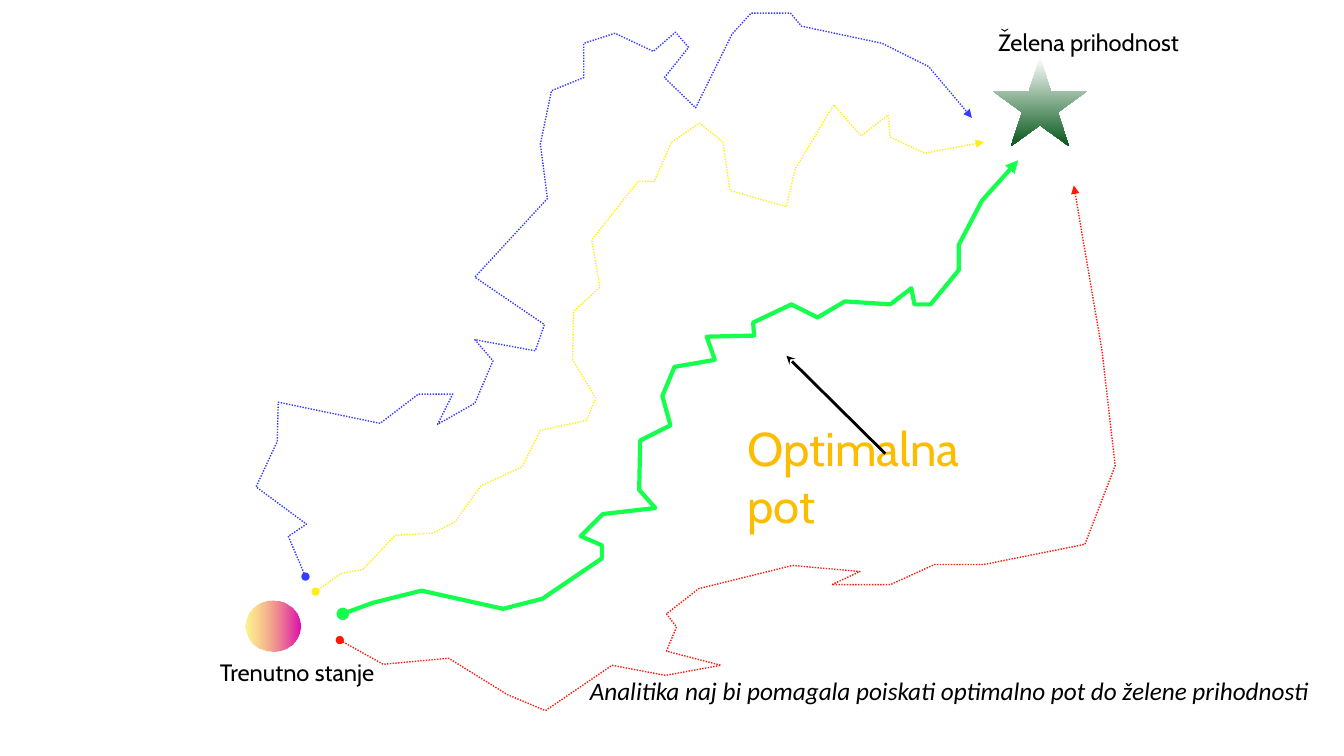
import pptx
import pptx.util
import pptx.dml.color
import pptx.enum.dml
import pptx.enum.shapes
import pptx.enum.text
import pptx.oxml
import pptx.oxml.ns

EMU_PER_PX = 9144
SLIDE_SIZE = (1333, 750)
COLORS = {
    "yellow": "FFEF17", "blue": "363DFF", "red": "FF1708", "green": "15FF4D",
    "black": "000000", "white": "FFFFFF", "forest": "06581A",
    "lemon": "FFE824", "magenta": "DD0CB0", "amber": "FCBD00",
}

OPTIMAL = "green"
ROUTES = {
    "yellow": [
        (313, 587), (338, 569), (360, 565), (392, 531), (429, 529), (451, 518),
        (477, 482), (518, 463), (536, 427), (582, 417), (591, 395), (568, 357),
        (569, 309), (595, 285), (587, 238), (633, 180), (649, 180), (666, 141),
        (694, 122), (717, 141), (724, 189), (780, 205), (789, 167), (827, 104),
        (854, 135), (881, 114), (883, 136), (917, 152), (976, 141)],
    "blue": [
        (303, 572), (286, 532), (304, 520), (254, 483), (275, 438), (276, 399),
        (377, 420), (415, 391), (449, 391), (434, 421), (471, 400), (489, 358),
        (471, 337), (531, 348), (540, 322), (471, 275), (543, 197), (536, 143),
        (547, 90), (579, 77), (579, 43), (610, 33), (648, 51), (670, 32),
        (683, 47), (659, 77), (690, 107), (726, 34), (745, 13), (784, 13),
        (795, 26), (875, 43), (921, 66), (964, 117)],
    "red": [
        (337, 635), (380, 659), (445, 653), (503, 689), (541, 705), (607, 660),
        (660, 670), (715, 660), (661, 646), (671, 622), (661, 609), (693, 584),
        (786, 561), (853, 567), (825, 580), (883, 580), (927, 560), (976, 560),
        (1076, 540), (1106, 462), (1093, 348), (1065, 184)],
    "green": [
        (340, 609), (370, 598), (418, 586), (499, 604), (538, 594), (597, 554),
        (597, 541), (576, 532), (598, 510), (650, 504), (634, 486), (635, 437),
        (665, 422), (657, 393), (669, 364), (709, 357), (701, 334), (748, 333),
        (747, 320), (785, 302), (811, 315), (838, 299), (883, 302), (904, 286),
        (907, 302), (923, 302), (951, 268), (951, 243), (974, 199), (1010, 159)],
}

MARKERS = [
    (pptx.enum.shapes.MSO_SHAPE.STAR_5_POINT, (985, 57, 93, 88), 270,
     [("white", 100), ("forest", 100)]),
    (pptx.enum.shapes.MSO_SHAPE.OVAL, (244, 596, 54, 50), 0,
     [("lemon", 50), ("magenta", 100)]),
]

POINTER = (780, 353, 878, 450)

PLACE_STYLE = {"size": 16.9, "font": "Cabin", "color_name": "black"}
LABELS = [
    ("Trenutno stanje", (218, 653, 163, 28), PLACE_STYLE),
    ("Želena prihodnost", (990, 28, 189, 28), PLACE_STYLE),
    ("Optimalna pot", (741, 445, 263, 54),
     {"size": 33.8, "font": "Cabin", "color_name": "amber", "wrap": True}),
    ("Analitika naj bi pomagala poiskati optimalno pot do želene prihodnosti",
     (585, 670, 716, 30),
     {"size": 18, "font": "Calibri", "color_name": "black", "italic": True}),
]


def emu(lengths):
    return [pptx.util.Emu(length * EMU_PER_PX) for length in lengths]


def color(name):
    return pptx.dml.color.RGBColor.from_string(COLORS[name])


def add_xml(parent, tag, attributes=""):
    namespace = pptx.oxml.ns.nsdecls("a")
    parent.append(pptx.oxml.parse_xml(f"<a:{tag} {namespace} {attributes}/>"))


def style_line(shape, color_name, width, **ends):
    shape.line.color.rgb = color(color_name)
    shape.line.width = pptx.util.Pt(width)
    line = shape.line._get_or_add_ln()
    for end, arrowhead in ends.items():
        add_xml(line, end, f'type="{arrowhead}"')


def add_route(slide, color_name, points):
    builder = slide.shapes.build_freeform(*points[0], scale=EMU_PER_PX)
    builder.add_line_segments(points[1:], close=False)
    route = builder.convert_to_shape()
    route.shadow.inherit = False
    route.fill.background()
    if color_name != OPTIMAL:
        route.line.dash_style = pptx.enum.dml.MSO_LINE.ROUND_DOT
    width = 3 if color_name == OPTIMAL else 1
    style_line(route, color_name, width, headEnd="oval", tailEnd="triangle")


def add_marker(slide, kind, box, angle, stops):
    marker = slide.shapes.add_shape(kind, *emu(box))
    marker.shadow.inherit = False
    marker.line.fill.background()
    marker.fill.gradient()
    marker.fill.gradient_angle = angle
    elements = marker._element.spPr.iter(pptx.oxml.ns.qn("a:gs"))
    gradient_stops = marker.fill.gradient_stops
    for index, (element, (name, opacity)) in enumerate(zip(elements, stops)):
        gradient_stops[index].position = index
        gradient_stops[index].color.rgb = color(name)
        add_xml(element[0], "alpha", f'val="{opacity * 1000}"')


def add_pointer(slide, ends):
    pointer = slide.shapes.add_connector(
        pptx.enum.shapes.MSO_CONNECTOR.STRAIGHT, *emu(ends))
    style_line(pointer, "black", 2, headEnd="stealth")
    add_xml(pointer._element.spPr, "effectLst")


def add_label(slide, text, box, size, font, color_name, italic=False, wrap=False):
    frame = slide.shapes.add_textbox(*emu(box)).text_frame
    frame.text = text
    frame.word_wrap = wrap
    frame.vertical_anchor = pptx.enum.text.MSO_ANCHOR.MIDDLE
    frame.margin_left = frame.margin_right = 0
    frame.margin_top = frame.margin_bottom = 0
    run = frame.paragraphs[0].runs[0]
    run.font.name = font
    run.font.size = pptx.util.Pt(size)
    run.font.italic = italic
    run.font.color.rgb = color(color_name)


def main():
    presentation = pptx.Presentation()
    presentation.slide_width, presentation.slide_height = emu(SLIDE_SIZE)
    slide = presentation.slides.add_slide(presentation.slide_layouts[6])
    for color_name, points in ROUTES.items():
        add_route(slide, color_name, points)
    for marker in MARKERS:
        add_marker(slide, *marker)
    for text, box, style in LABELS:
        add_label(slide, text, box, **style)
    add_pointer(slide, POINTER)
    presentation.save("out.pptx")


if __name__ == "__main__":
    main()
